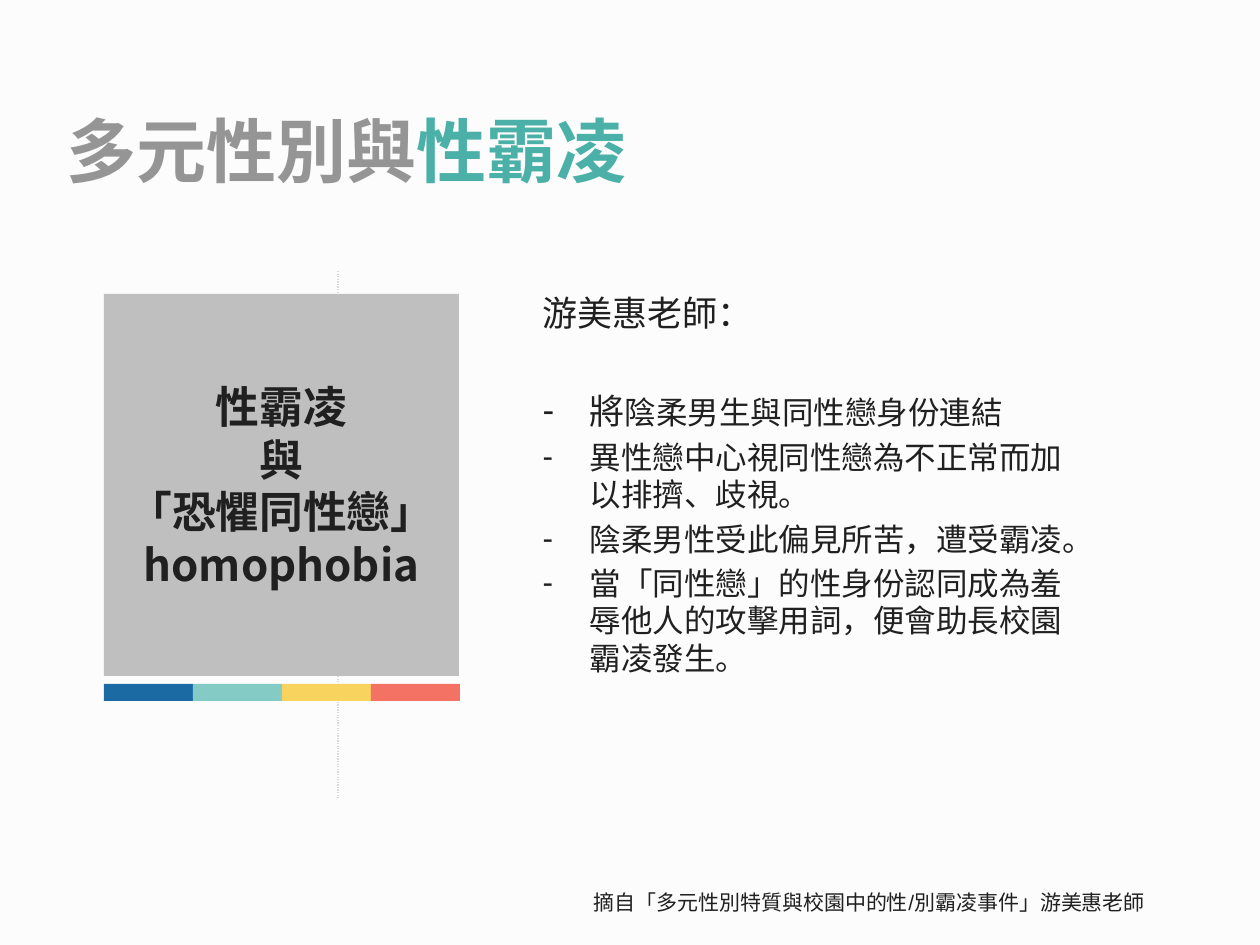
"""Build a slide on gender diversity and homophobic bullying."""
from lxml import etree
from pptx import Presentation
from pptx.dml.color import RGBColor
from pptx.enum.dml import MSO_LINE
from pptx.enum.shapes import MSO_CONNECTOR, MSO_SHAPE
from pptx.enum.text import MSO_ANCHOR, MSO_AUTO_SIZE, PP_ALIGN
from pptx.oxml.ns import qn
from pptx.util import Pt

PX = 914400 // 126
CENTER, LEFT = PP_ALIGN.CENTER, PP_ALIGN.LEFT
MIDDLE, TOP = MSO_ANCHOR.MIDDLE, MSO_ANCHOR.TOP
RECTANGLE, STRAIGHT = MSO_SHAPE.RECTANGLE, MSO_CONNECTOR.STRAIGHT
DOTTED, NO_FIT = MSO_LINE.ROUND_DOT, MSO_AUTO_SIZE.NONE

COLORS = {
    "background": "FCFCFC", "text": "202020", "title": "959595", "accent": "4BB1A8",
    "guide": "D9D9D9", "panel": "BFBFBF", "blue": "1B6AA3", "teal": "84CBC5",
    "yellow": "F8D35E", "red": "F47264",
}
HEADING_FONT, BODY_FONT, SOURCE_FONT = "Noto Sans CJK SC", "Calibri", "Arial"

TITLE = [("多元性別與", "title"), ("性霸凌", "accent")]
PANEL_LINES = ["性霸凌", "與", "「恐懼同性戀」", "homophobia"]
STRIPES = ["blue", "teal", "yellow", "red"]
BODY_HEADING = "游美惠老師："
BULLETS = [
    [("將", 20), ("陰柔男生與同性戀身份連結", 18)],
    [("異性戀中心視同性戀為不正常而加以排擠、歧視。", 18)],
    [("陰柔男性受此偏見所苦，遭受霸凌。", 18)],
    [("當「同性戀」的性身份認同成為羞辱他人的攻擊用詞，便會助長校園霸凌發生。", 18)],
]
SOURCE = "摘自「多元性別特質與校園中的性/別霸凌事件」游美惠老師"

TITLE_BOX = (54, 96, 1134, 107)
PANEL_BOX = (104, 294, 355, 382)
STRIPE_TOP, STRIPE_WIDTH, STRIPE_HEIGHT = 684, 89, 17
BODY_BOX = (530, 285, 576, 515)
SOURCE_BOX = (581, 883, 595, 38)
GUIDE = (338, 271, 338, 799)
BULLET_INDENT = 47


def scaled(lengths):
    return [length * PX for length in lengths]


def color(name):
    return RGBColor.from_string(COLORS[name])


def place(shape, box):
    shape.left, shape.top, shape.width, shape.height = scaled(box)


def add_run(paragraph, text, size, font, color_name="text", bold=False):
    run = paragraph.add_run()
    run.text = text
    run.font.size, run.font.name, run.font.bold = Pt(size), font, bold
    run.font.color.rgb = color(color_name)


def add_rectangle(group, box, color_name):
    shape = group.shapes.add_shape(RECTANGLE, *scaled(box))
    shape.shadow.inherit = False
    shape.fill.solid()
    shape.fill.fore_color.rgb = color(color_name)
    shape.line.fill.background()
    return shape


def set_bullet(paragraph, character=None):
    properties = paragraph._p.get_or_add_pPr()
    indent = BULLET_INDENT * PX if character else 0
    properties.set("marL", str(indent))
    properties.set("indent", str(-indent))
    if character:
        etree.SubElement(properties, qn("a:buChar")).set("char", character)
    else:
        etree.SubElement(properties, qn("a:buNone"))


def add_guide(slide):
    guide = slide.shapes.add_connector(STRAIGHT, *scaled(GUIDE))
    guide.line.color.rgb = color("guide")
    guide.line.width = Pt(0.75)
    guide.line.dash_style = DOTTED
    etree.SubElement(guide._element.spPr, qn("a:effectLst"))


def add_panel(slide):
    group = slide.shapes.add_group_shape()
    frame = add_rectangle(group, PANEL_BOX, "panel").text_frame
    frame.vertical_anchor = MIDDLE
    for index, line in enumerate(PANEL_LINES):
        paragraph = frame.add_paragraph() if index else frame.paragraphs[0]
        paragraph.alignment = CENTER
        paragraph.line_spacing = Pt(30)
        add_run(paragraph, line, 25, HEADING_FONT, bold=True)
    for index, name in enumerate(STRIPES):
        left = PANEL_BOX[0] + index * STRIPE_WIDTH
        add_rectangle(group, (left, STRIPE_TOP, STRIPE_WIDTH, STRIPE_HEIGHT), name)


def fill_title(title):
    place(title, TITLE_BOX)
    frame = title.text_frame
    frame.vertical_anchor, frame.auto_size = MIDDLE, NO_FIT
    frame.paragraphs[0].alignment = LEFT
    for text, name in TITLE:
        add_run(frame.paragraphs[0], text, 40, HEADING_FONT, name, True)


def fill_body(body):
    place(body, BODY_BOX)
    frame = body.text_frame
    frame.vertical_anchor, frame.auto_size = TOP, NO_FIT
    heading = frame.paragraphs[0]
    heading.space_before = Pt(0)
    set_bullet(heading)
    add_run(heading, BODY_HEADING, 20, BODY_FONT)
    for index, runs in enumerate(BULLETS):
        paragraph = frame.add_paragraph()
        paragraph.space_before = Pt(3.6 if index else 32)
        set_bullet(paragraph, "-")
        for text, size in runs:
            add_run(paragraph, text, size, BODY_FONT)


def add_source(slide):
    frame = slide.shapes.add_textbox(*scaled(SOURCE_BOX)).text_frame
    frame.word_wrap = True
    add_run(frame.paragraphs[0], SOURCE, 12, SOURCE_FONT)


def main():
    presentation = Presentation()
    presentation.slide_width, presentation.slide_height = scaled((1260, 945))
    slide = presentation.slides.add_slide(presentation.slide_layouts[1])
    slide.background.fill.solid()
    slide.background.fill.fore_color.rgb = color("background")
    add_guide(slide)
    add_panel(slide)
    fill_title(slide.shapes.title)
    fill_body(slide.placeholders[1])
    add_source(slide)
    presentation.save("out.pptx")


if __name__ == "__main__":
    main()
